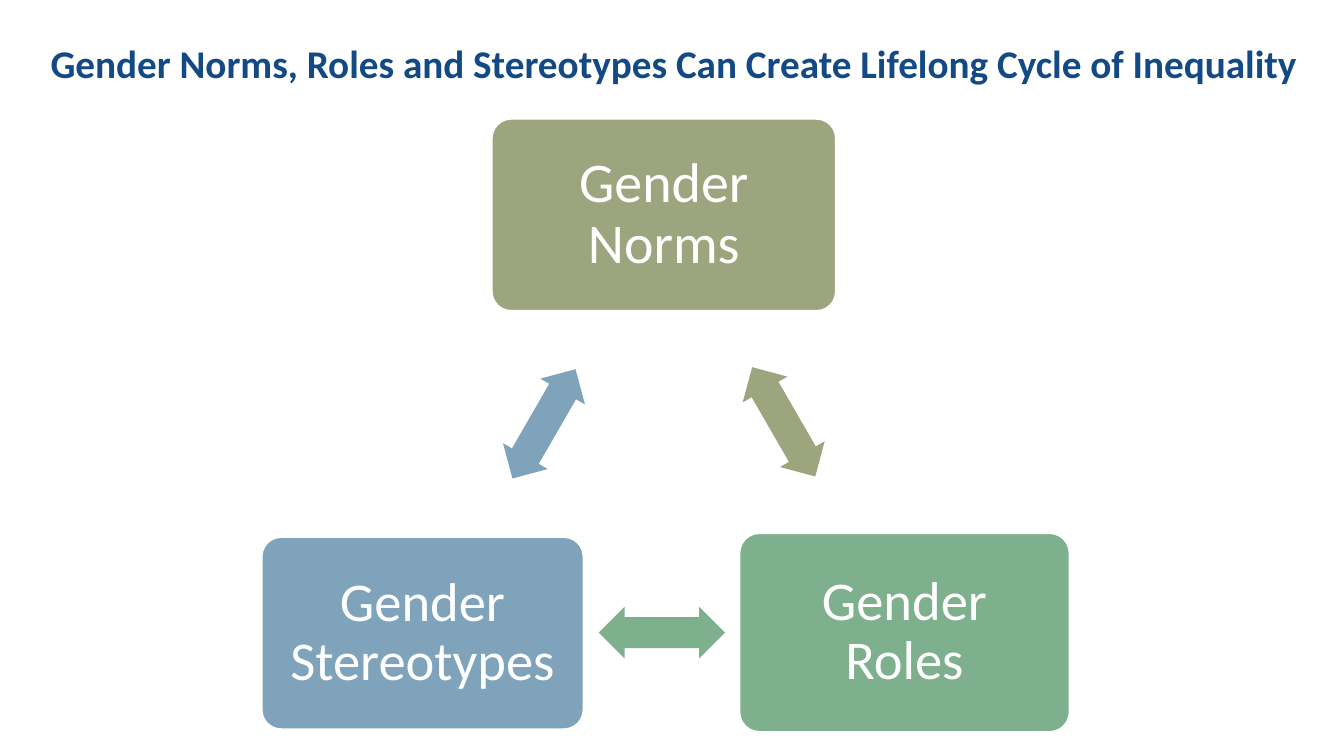
from pptx import Presentation
from pptx import util as u
from pptx.dml.color import RGBColor
from pptx.enum import shapes, text

FONT = "Calibri"
WHITE, NAVY = "FFFFFF", "134985"
OLIVE, GREEN, BLUE = "9CA57D", "7EB08D", "7FA3BA"
ARROW_SIZE = (3.18, 1.3)

# Boxes are left, top, width, height in cm, relative to the cycle's corner
CONCEPTS = [
    ("Gender Norms", (5.8, 0, 8.66, 4.83), 40, OLIVE),
    ("Gender Roles", (12.04, 10.44, 8.31, 5), 39, GREEN),
    ("Gender Stereotypes", (0, 10.54, 8.1, 4.83), 39, BLUE),
]
# Left, top, rotation, colour
ARROWS = [
    (11.56, 6.98, 60, OLIVE),
    (8.49, 12.29, 180, GREEN),
    (5.52, 7.03, 300, BLUE),
]


def colour(value):
    return RGBColor.from_string(value)


def style_font(font, size, value, bold=False):
    font.name = FONT
    font.size = u.Pt(size)
    font.bold = bold
    font.color.rgb = colour(value)


def add_filled(page, kind, box, fill):
    shape = page.shapes.add_shape(kind, *(u.Cm(length) for length in box))
    shape.shadow.inherit = False
    shape.fill.solid()
    shape.fill.fore_color.rgb = colour(fill)
    return shape


def add_title(page, wording, box):
    title = page.shapes.title
    title.left, title.top, title.width, title.height = (u.Cm(length) for length in box)
    frame = title.text_frame
    frame.text = wording
    frame.word_wrap = True
    frame.auto_size = text.MSO_AUTO_SIZE.NONE
    frame.vertical_anchor = text.MSO_ANCHOR.TOP
    para = frame.paragraphs[0]
    para.alignment = text.PP_ALIGN.LEFT
    style_font(para.font, 28, NAVY, bold=True)


def add_concept(page, wording, box, size, fill):
    card = add_filled(page, shapes.MSO_SHAPE.ROUNDED_RECTANGLE, box, fill)
    card.adjustments[0] = 0.1
    card.line.color.rgb = colour(WHITE)
    card.line.width = u.Pt(1)
    frame = card.text_frame
    frame.text = wording
    frame.word_wrap = True
    frame.vertical_anchor = text.MSO_ANCHOR.MIDDLE
    frame.margin_left = frame.margin_right = u.Cm(0.56)
    frame.margin_top = frame.margin_bottom = u.Cm(0.56)
    para = frame.paragraphs[0]
    para.alignment = text.PP_ALIGN.CENTER
    para.line_spacing = 0.9
    style_font(para.font, size, WHITE)


def add_cycle(page, left, top):
    # Concept cards
    for wording, (x, y, width, height), size, fill in CONCEPTS:
        add_concept(page, wording, (left + x, top + y, width, height), size, fill)

    # Two-way arrows between the cards
    for x, y, rotation, fill in ARROWS:
        arrow = add_filled(page, shapes.MSO_SHAPE.LEFT_RIGHT_ARROW,
                           (left + x, top + y, *ARROW_SIZE), fill)
        arrow.adjustments[0] = 0.6
        arrow.adjustments[1] = 0.5
        arrow.rotation = rotation
        arrow.line.fill.background()


def main():
    deck = Presentation()
    deck.slide_width, deck.slide_height = u.Cm(33.87), u.Cm(19.05)
    page = deck.slides.add_slide(deck.slide_layouts.get_by_name("Title Only"))
    add_title(page, "Gender Norms, Roles and Stereotypes Can Create "
                    "Lifelong Cycle of Inequality", (1.02, 0.86, 32.84, 2.24))
    add_cycle(page, 6.6, 3)
    deck.save("out.pptx")


if __name__ == "__main__":
    main()
